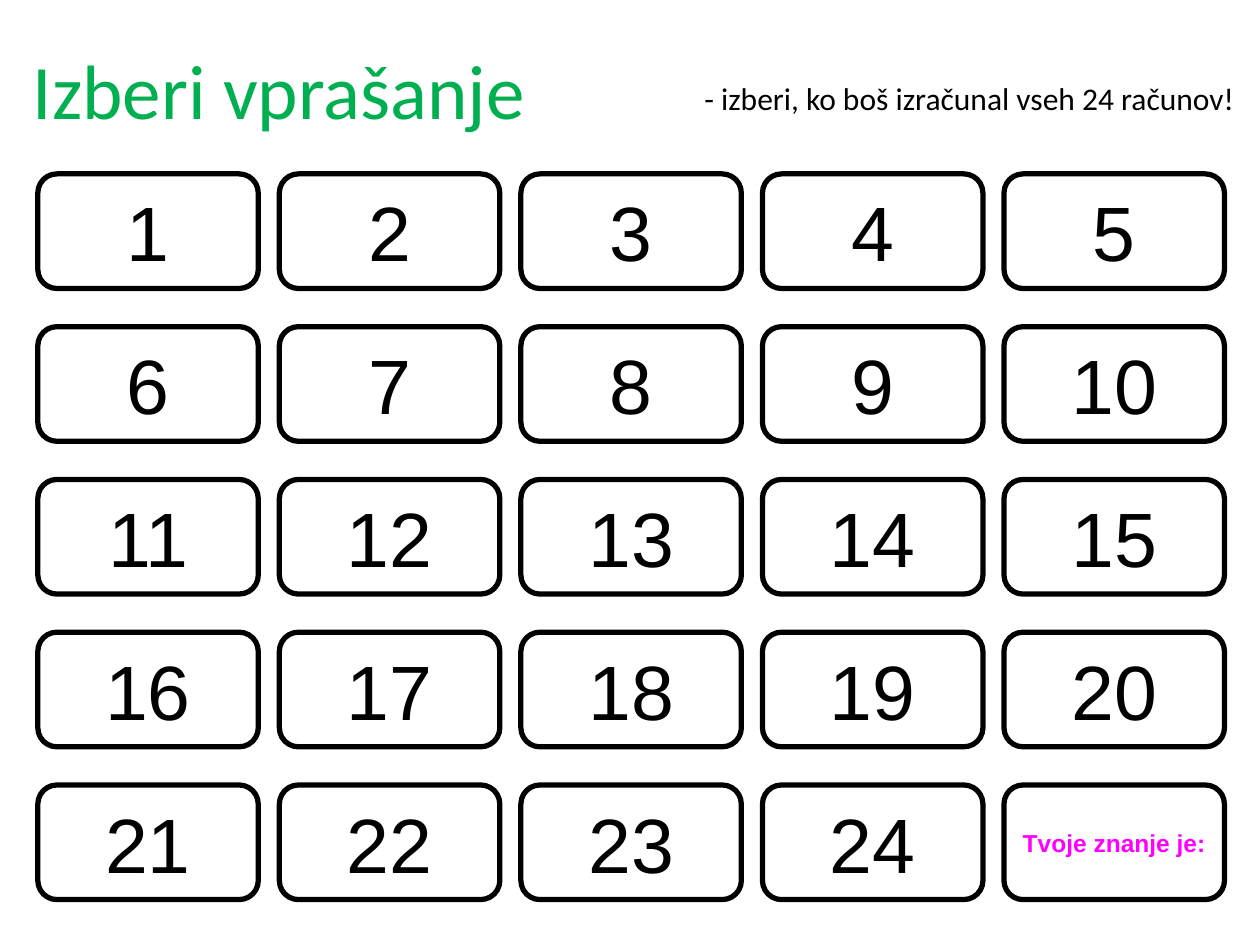
from dataclasses import dataclass

from pptx import Presentation
from pptx.dml.color import RGBColor
from pptx.enum.shapes import MSO_SHAPE
from pptx.enum.text import MSO_ANCHOR, PP_ALIGN
from pptx.util import Inches, Pt


@dataclass(frozen=True)
class Theme:
    heading_font: str = "Calibri"
    card_font: str = "Arial"
    green: RGBColor = RGBColor(0x00, 0xB0, 0x50)
    black: RGBColor = RGBColor(0x00, 0x00, 0x00)
    magenta: RGBColor = RGBColor(0xFF, 0x00, 0xFF)
    large: int = 44
    hint: int = 18
    small: int = 14
    outline: int = 3


THEME = Theme()
COLUMNS = 5
QUESTIONS = 24
GRID_LEFT, GRID_TOP = 0.3, 1.38
COLUMN_STEP, ROW_STEP = 1.917, 1.2125
CARD_WIDTH, CARD_HEIGHT = 1.75, 0.91


def write(frame, text, font, size, color, align=PP_ALIGN.CENTER, bold=False):
    frame.text = text
    paragraph = frame.paragraphs[0]
    paragraph.alignment = align
    paragraph.font.name = font
    paragraph.font.size = Pt(size)
    paragraph.font.color.rgb = color
    paragraph.font.bold = bold


def add_title(slide, text):
    title = slide.shapes.title
    title.left, title.top = Inches(0.13), Inches(0.15)
    title.width, title.height = Inches(4.17), Inches(1.11)
    title.text_frame.vertical_anchor = MSO_ANCHOR.MIDDLE
    write(title.text_frame, text, THEME.heading_font, THEME.large, THEME.green)


def add_hint(slide, text):
    hint = slide.shapes.add_textbox(
        Inches(5.39), Inches(0.58), Inches(4.61), Inches(0.4))
    frame = hint.text_frame
    frame.word_wrap = True
    frame.margin_left = Inches(0.2)
    write(frame, text, THEME.heading_font, THEME.hint, THEME.black, PP_ALIGN.LEFT)


def add_card(slide, position, text, size=THEME.large, color=THEME.black, bold=False):
    """Draw one card; positions count from 0, row by row."""
    row, column = divmod(position, COLUMNS)
    card = slide.shapes.add_shape(
        MSO_SHAPE.ROUNDED_RECTANGLE,
        Inches(GRID_LEFT + column * COLUMN_STEP), Inches(GRID_TOP + row * ROW_STEP),
        Inches(CARD_WIDTH), Inches(CARD_HEIGHT))
    card.shadow.inherit = False
    card.fill.background()
    card.line.color.rgb = THEME.black
    card.line.width = Pt(THEME.outline)
    card.text_frame.word_wrap = False
    card.text_frame.vertical_anchor = MSO_ANCHOR.MIDDLE
    write(card.text_frame, text, THEME.card_font, size, color, bold=bold)


def main():
    deck = Presentation()
    deck.slide_width, deck.slide_height = Inches(10), Inches(7.5)
    title_only = deck.slide_layouts.get_by_name("Title Only")
    slide = deck.slides.add_slide(title_only)

    add_title(slide, "Izberi vprašanje")
    for position in range(QUESTIONS):
        add_card(slide, position, str(position + 1))
    add_card(slide, QUESTIONS, "Tvoje znanje je:", THEME.small, THEME.magenta, bold=True)
    add_hint(slide, "- izberi, ko boš izračunal vseh 24 računov!")

    deck.save("out.pptx")


if __name__ == "__main__":
    main()
